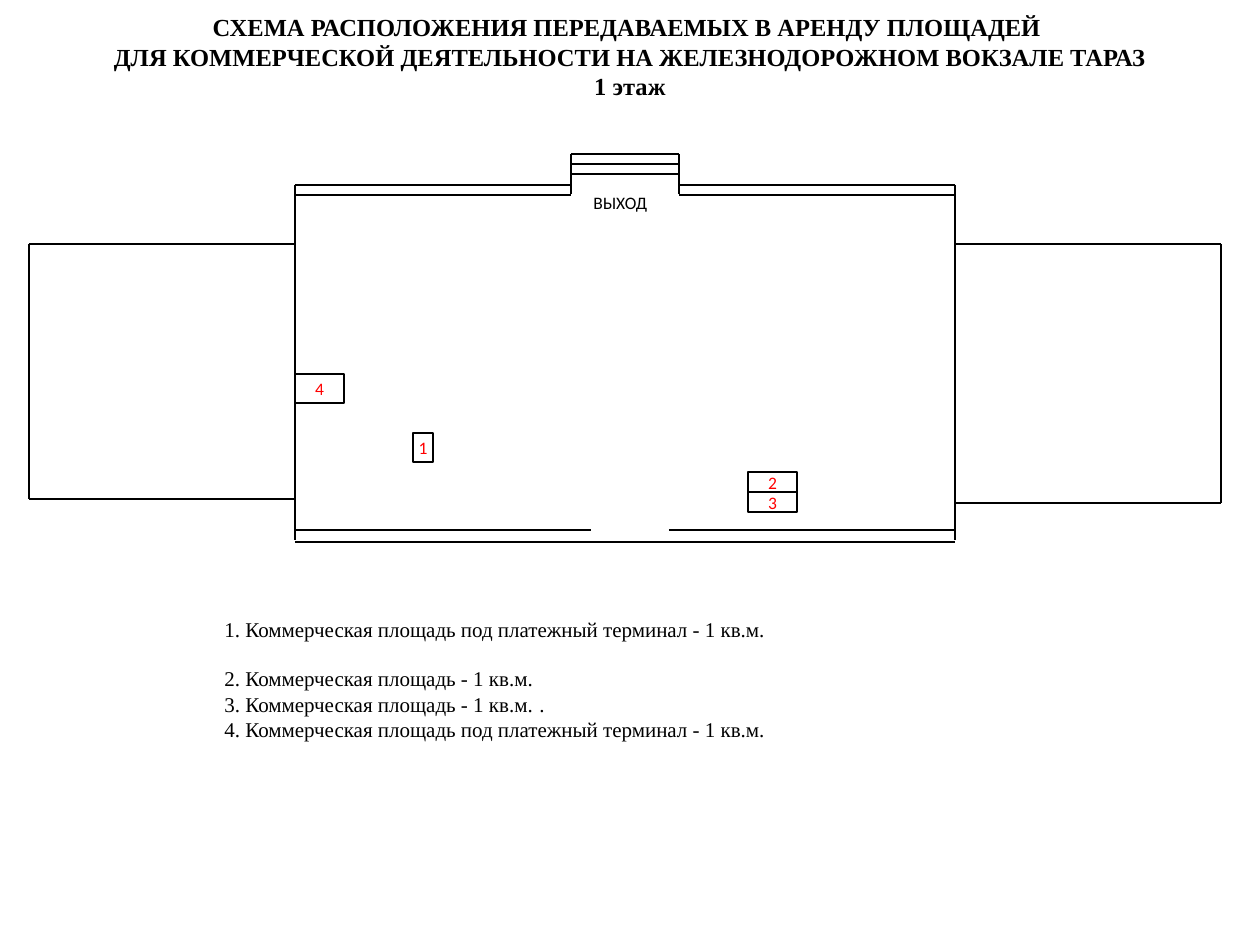
from dataclasses import dataclass

from lxml.etree import SubElement
from pptx import Presentation
from pptx.dml.color import RGBColor
from pptx.enum.shapes import MSO_CONNECTOR as Connector, MSO_SHAPE as Shape
from pptx.enum.text import MSO_ANCHOR as Anchor, PP_ALIGN as Align
from pptx.oxml.ns import qn
from pptx.util import Pt

EMU_PER_PX = 914400 / 126


@dataclass(frozen=True)
class Theme:
    """Colours, fonts and sizes of the floor plan."""
    ink: RGBColor = RGBColor(0, 0, 0)
    paper: RGBColor = RGBColor(255, 255, 255)
    number: RGBColor = RGBColor(255, 0, 0)
    serif: str = "Times New Roman"
    sans: str = "Calibri"
    title: int = 14
    legend: int = 12
    label: int = 10
    wall: float = 0.75
    border: float = 1


THEME = Theme()

LEFT_WING, HALL_LEFT, PORCH_LEFT = 29, 295, 571
PORCH_RIGHT, HALL_RIGHT, RIGHT_WING = 679, 955, 1221
DOOR_LEFT, DOOR_RIGHT = 591, 669
PORCH_TOP, STEP, HALL_TOP, INNER_TOP = 154, 10, 185, 195
INNER_BOTTOM, HALL_BOTTOM = 530, 542
WING_TOP, LEFT_WING_BOTTOM, RIGHT_WING_BOTTOM = 244, 499, 503

TITLE = (
    "СХЕМА РАСПОЛОЖЕНИЯ ПЕРЕДАВАЕМЫХ В АРЕНДУ ПЛОЩАДЕЙ ",
    "ДЛЯ КОММЕРЧЕСКОЙ ДЕЯТЕЛЬНОСТИ НА ЖЕЛЕЗНОДОРОЖНОМ ВОКЗАЛЕ ТАРАЗ",
    "1 этаж",
)
LEGEND = (
    "1. Коммерческая площадь под платежный терминал - 1 кв.м.",
    "2. Коммерческая площадь - 1 кв.м.",
    "3. Коммерческая площадь - 1 кв.м.\t.",
    "4. Коммерческая площадь под платежный терминал - 1 кв.м.",
)
AREAS = (
    ("1", 413, 433, 20, 29),
    ("2", 748, 472, 49, 20),
    ("3", 748, 492, 49, 20),
    ("4", 295, 374, 49, 29),
)


def px(*lengths):
    """Turn pixel lengths into EMU."""
    return [round(length * EMU_PER_PX) for length in lengths]


def style(para, font, size, color, bold=False):
    """Set the font of a whole paragraph."""
    para.font.name = font
    para.font.size = Pt(size)
    para.font.bold = bold
    para.font.color.rgb = color


def add_wall(page, x1, y1, x2, y2):
    """Draw one wall line."""
    wall = page.shapes.add_connector(Connector.STRAIGHT, *px(x1, y1, x2, y2))
    wall.line.color.rgb = THEME.ink
    wall.line.width = Pt(THEME.wall)
    SubElement(wall.element.spPr, qn("a:effectLst"))


def add_text(page, bounds, lines, font, size, align=Align.LEFT, bold=False):
    """Add a wrapped text box and return its paragraphs."""
    frame = page.shapes.add_textbox(*px(*bounds)).text_frame
    frame.word_wrap = True
    frame.text = "\n".join(lines)
    for para in frame.paragraphs:
        para.alignment = align
        style(para, font, size, THEME.ink, bold)
    return frame.paragraphs


def add_area(page, number, *bounds):
    """Add a numbered rental area."""
    area = page.shapes.add_shape(Shape.RECTANGLE, *px(*bounds))
    area.shadow.inherit = False
    area.fill.solid()
    area.fill.fore_color.rgb = THEME.paper
    area.line.color.rgb = THEME.ink
    area.line.width = Pt(THEME.border)
    frame = area.text_frame
    frame.margin_left = frame.margin_right = 0
    frame.margin_top = frame.margin_bottom = 0
    frame.vertical_anchor = Anchor.MIDDLE
    frame.text = number
    para = frame.paragraphs[0]
    para.alignment = Align.CENTER
    style(para, THEME.sans, THEME.label, THEME.number)


def add_hall(page):
    """Draw the central hall with its double front and back walls."""
    for y in (HALL_TOP, INNER_TOP):
        add_wall(page, HALL_LEFT, y, PORCH_LEFT, y)
        add_wall(page, PORCH_RIGHT, y, HALL_RIGHT, y)
    for x in (HALL_LEFT, HALL_RIGHT):
        add_wall(page, x, HALL_TOP, x, HALL_BOTTOM - 2)
    add_wall(page, HALL_LEFT, INNER_BOTTOM, DOOR_LEFT, INNER_BOTTOM)
    add_wall(page, DOOR_RIGHT, INNER_BOTTOM, HALL_RIGHT, INNER_BOTTOM)
    add_wall(page, HALL_LEFT, HALL_BOTTOM, HALL_RIGHT, HALL_BOTTOM)


def add_porch(page):
    """Draw the exit porch and its steps."""
    for x in (PORCH_LEFT, PORCH_RIGHT):
        add_wall(page, x, PORCH_TOP, x, INNER_TOP - 1)
    for step in range(3):
        y = PORCH_TOP + step * STEP
        add_wall(page, PORCH_LEFT, y, PORCH_RIGHT, y)


def add_wing(page, outer, inner, bottom):
    """Draw a side wing that is open towards the hall."""
    for y in (WING_TOP, bottom):
        add_wall(page, outer, y, inner, y)
    add_wall(page, outer, WING_TOP, outer, bottom)


def main():
    """Build the station floor plan."""
    deck = Presentation()
    deck.slide_width, deck.slide_height = px(1260, 945)
    page = deck.slides.add_slide(deck.slide_layouts[6])
    add_hall(page)
    add_porch(page)
    add_wing(page, LEFT_WING, HALL_LEFT, LEFT_WING_BOTTOM)
    add_wing(page, RIGHT_WING, HALL_RIGHT, RIGHT_WING_BOTTOM)
    add_text(page, (581, 186, 98, 34), ["ВЫХОД"], THEME.sans, THEME.label)
    for area in AREAS:
        add_area(page, *area)
    legend = add_text(page, (212, 610, 799, 140), LEGEND, THEME.serif, THEME.legend)
    legend[1].space_before = Pt(14)
    add_text(page, (0, 6, 1260, 102), TITLE, THEME.serif, THEME.title,
             Align.CENTER, bold=True)
    deck.save("out.pptx")


if __name__ == "__main__":
    main()
